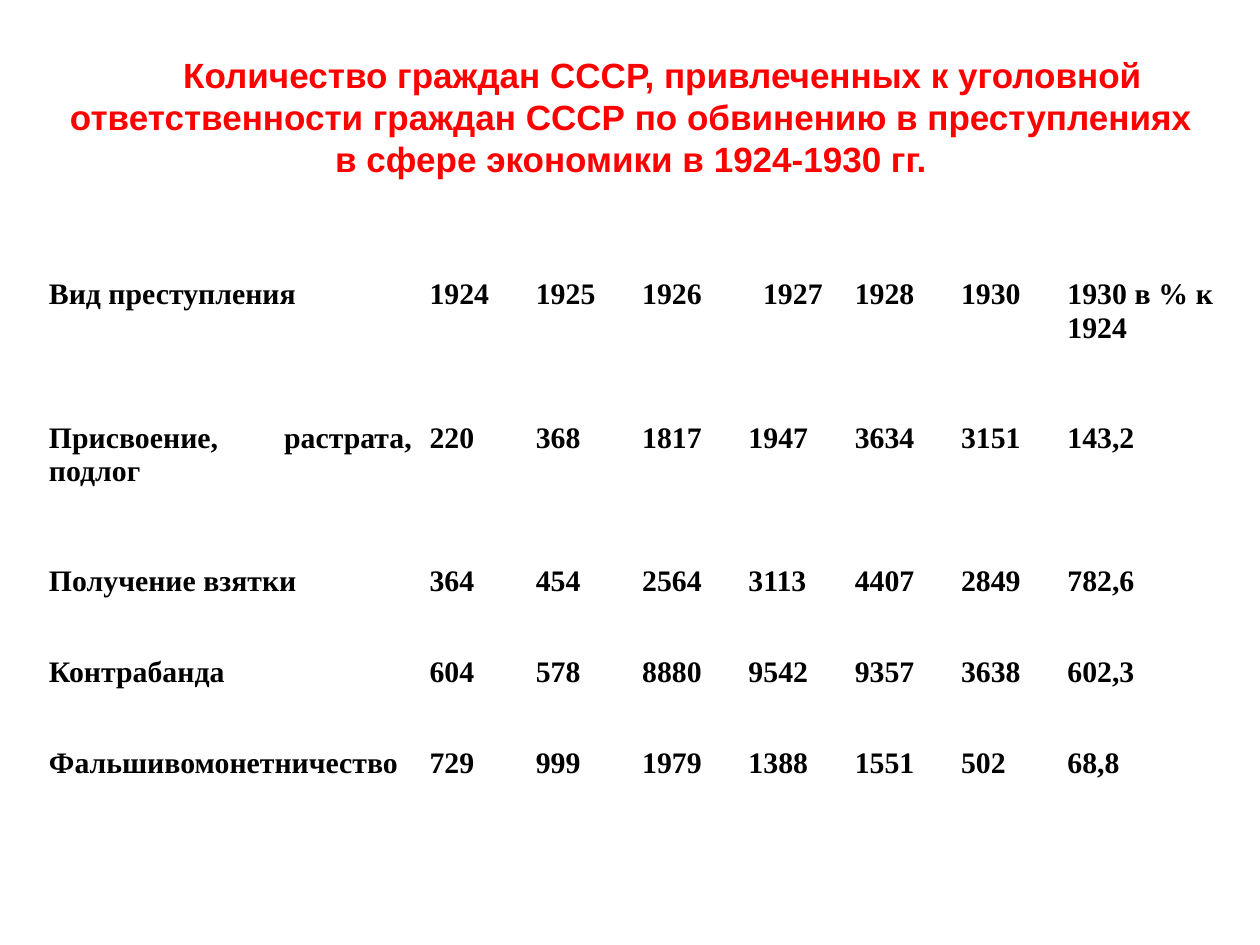
from pptx import Presentation
from pptx.dml.color import RGBColor
from pptx.enum.text import MSO_ANCHOR, PP_ALIGN
from pptx.util import Pt

CENTER, JUSTIFY = PP_ALIGN.CENTER, PP_ALIGN.JUSTIFY
MIDDLE = MSO_ANCHOR.MIDDLE
COLORS = {"title": "FF0000", "text": "000000"}

TITLE = ("Количество граждан СССР, привлеченных к уголовной ответственности "
         "граждан СССР по обвинению в преступлениях\v"
         "в сфере экономики в 1924-1930 гг.")
ROWS = [
    ("Вид преступления", "1924", "1925", "1926", "1927", "1928", "1930", "1930 в % к 1924"),
    ("Присвоение, растрата, подлог", "220", "368", "1817", "1947", "3634", "3151", "143,2"),
    ("Получение взятки", "364", "454", "2564", "3113", "4407", "2849", "782,6"),
    ("Контрабанда", "604", "578", "8880", "9542", "9357", "3638", "602,3"),
    ("Фальшивомонетничество", "729", "999", "1979", "1388", "1551", "502", "68,8"),
]
COL_WIDTHS = [217.5] + [60.75] * 6 + [93.3]
ROW_HEIGHTS = [82] * 2 + [51.8] * 3
CELL_MARGIN = Pt(5)


def style_paragraph(p, font, size, color, align):
    p.alignment = align
    p.font.name = font
    p.font.size = Pt(size)
    p.font.bold = True
    p.font.color.rgb = RGBColor.from_string(COLORS[color])


def add_title(s, x, y, w, h):
    tf = s.shapes.add_textbox(Pt(x), Pt(y), Pt(w), Pt(h)).text_frame
    tf.word_wrap = True
    tf.vertical_anchor = MIDDLE
    p = tf.paragraphs[0]
    p.text = TITLE
    style_paragraph(p, "Arial", 20, "title", CENTER)
    p.line_spacing = Pt(24)
    # First-line indent
    p._p.get_or_add_pPr().set("indent", str(Pt(36)))


def add_crime_table(s, x, y, w, h):
    frame = s.shapes.add_table(len(ROWS), len(COL_WIDTHS), Pt(x), Pt(y), Pt(w), Pt(h))
    table = frame.table
    table.first_row = table.horz_banding = False
    for column, width in zip(table.columns, COL_WIDTHS):
        column.width = Pt(width)
    for row, height in zip(table.rows, ROW_HEIGHTS):
        row.height = Pt(height)

    for i, values in enumerate(ROWS):
        for j, value in enumerate(values):
            cell = table.cell(i, j)
            cell.fill.background()
            cell.margin_left = cell.margin_right = CELL_MARGIN
            cell.margin_top = cell.margin_bottom = CELL_MARGIN
            p = cell.text_frame.paragraphs[0]
            p.text = value
            # The 1927 heading alone is centred
            align = CENTER if (i, j) == (0, 4) else JUSTIFY
            style_paragraph(p, "Times New Roman", 17, "text", align)


def main():
    prs = Presentation()
    prs.slide_width, prs.slide_height = Pt(720), Pt(540)
    s = prs.slides.add_slide(prs.slide_layouts[6])
    add_title(s, 23, 21.6, 675.3, 90)
    add_crime_table(s, 23, 154, sum(COL_WIDTHS), sum(ROW_HEIGHTS))
    prs.save("out.pptx")


if __name__ == "__main__":
    main()
